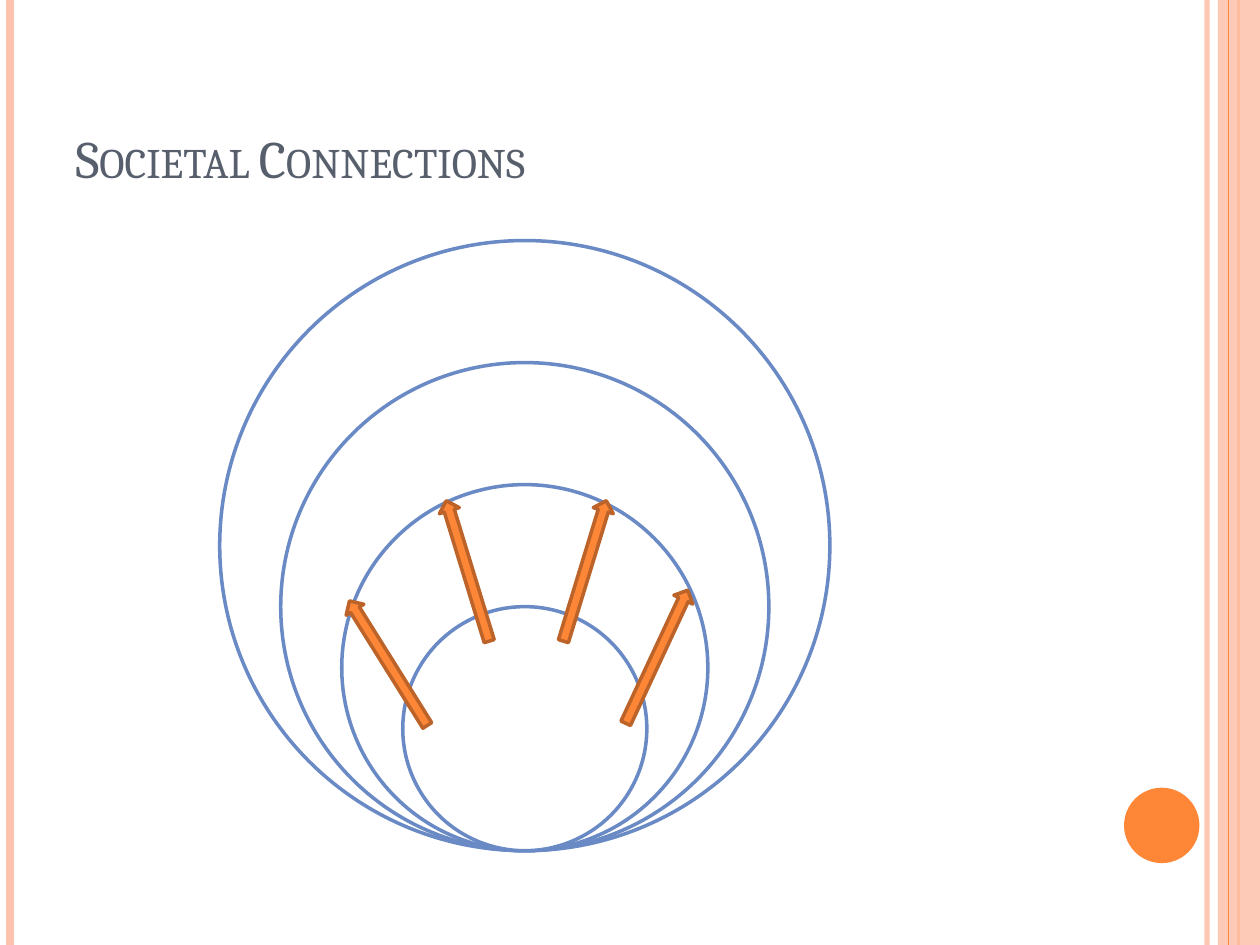
from lxml.etree import SubElement
from pptx import Presentation
from pptx.dml.color import RGBColor
from pptx.enum.shapes import MSO_CONNECTOR, MSO_SHAPE
from pptx.enum.text import MSO_ANCHOR, MSO_AUTO_SIZE, PP_ALIGN
from pptx.oxml.ns import qn
from pptx.util import Cm, Pt

WIDTH, HEIGHT = 25.4, 19.05


def rgb(value):
    return RGBColor.from_string(value)


def set_alpha(sppr, percent):
    color = next(sppr.iter(qn("a:srgbClr")))
    SubElement(color, qn("a:alpha"), val=str(percent * 1000))


class SlideBuilder:
    """Holds the slide style and adds each kind of element."""

    font = "Cambria"
    orange, peach, rust = "FE8637", "FEC3AE", "BC6329"
    blue, slate, white = "6A8AC5", "575F6D", "FFFFFF"

    def __init__(self, prs):
        self.s = prs.slides.add_slide(prs.slide_layouts[5])

    def title(self, text, *box):
        sp = self.s.shapes.title
        sp.left, sp.top, sp.width, sp.height = map(Cm, box)
        tf = sp.text_frame
        tf.text = text
        tf.word_wrap = True
        tf.auto_size = MSO_AUTO_SIZE.NONE
        tf.vertical_anchor = MSO_ANCHOR.BOTTOM
        p = tf.paragraphs[0]
        p.alignment = PP_ALIGN.LEFT
        p.font.name, p.font.size = self.font, Pt(30)
        p.font.color.rgb = rgb(self.slate)
        p._p.pPr.find(qn("a:defRPr")).set("cap", "small")

    def stripe(self, x, color, weight, alpha=100):
        line = self.s.shapes.add_connector(
            MSO_CONNECTOR.STRAIGHT, Cm(x), Cm(0), Cm(x), Cm(HEIGHT))
        line.line.color.rgb = rgb(color)
        line.line.width = Pt(weight)
        sppr = line._element.spPr
        SubElement(sppr, qn("a:effectLst"))
        if alpha < 100:
            set_alpha(sppr, alpha)

    def shape(self, kind, box, fill, line=None, rotation=0, parent=None):
        shapes = (parent or self.s).shapes
        sp = shapes.add_shape(kind, *map(Cm, box))
        sp.shadow.inherit = False
        sp.rotation = rotation
        sp.fill.solid()
        sp.fill.fore_color.rgb = rgb(fill)
        if line:
            sp.line.color.rgb = rgb(line)
            sp.line.width = Pt(2)
        else:
            sp.line.fill.background()
        return sp

    def nested_circles(self, center, bottom, diameters):
        group = self.s.shapes.add_group_shape()
        for d in diameters:
            box = (center - d / 2, bottom - d, d, d)
            self.shape(MSO_SHAPE.OVAL, box, self.white, self.blue, parent=group)

    def arrow(self, left, top, rotation):
        self.shape(MSO_SHAPE.UP_ARROW, (left, top, 0.42, 2.96),
                   self.orange, self.rust, rotation)

    def frame(self):
        self.stripe(24.33, self.peach, 3, alpha=93)
        self.stripe(0.21, self.peach, 4.5)
        self.stripe(24.97, self.orange, 1.5)
        band = self.shape(MSO_SHAPE.RECTANGLE, (24.55, 0, WIDTH - 24.55, HEIGHT), self.peach)
        set_alpha(band._element.spPr, 87)
        self.stripe(24.77, self.orange, 0.75)
        self.shape(MSO_SHAPE.OVAL, (22.66, 15.88, 1.52, 1.52), self.orange)


def main():
    prs = Presentation()
    prs.slide_width, prs.slide_height = Cm(WIDTH), Cm(HEIGHT)
    b = SlideBuilder(prs)
    b.frame()
    b.title("Societal Connections", 1.27, 0.76, 20.75, 3.18)
    b.nested_circles(10.58, 17.15, [2.46 * n for n in (5, 4, 3, 2)])
    for left, top, rotation in [(11.58, 10.03, 17), (9.22, 10.03, -17),
                                (13.03, 11.76, 25), (7.62, 11.89, -32)]:
        b.arrow(left, top, rotation)
    prs.save("out.pptx")


if __name__ == "__main__":
    main()
